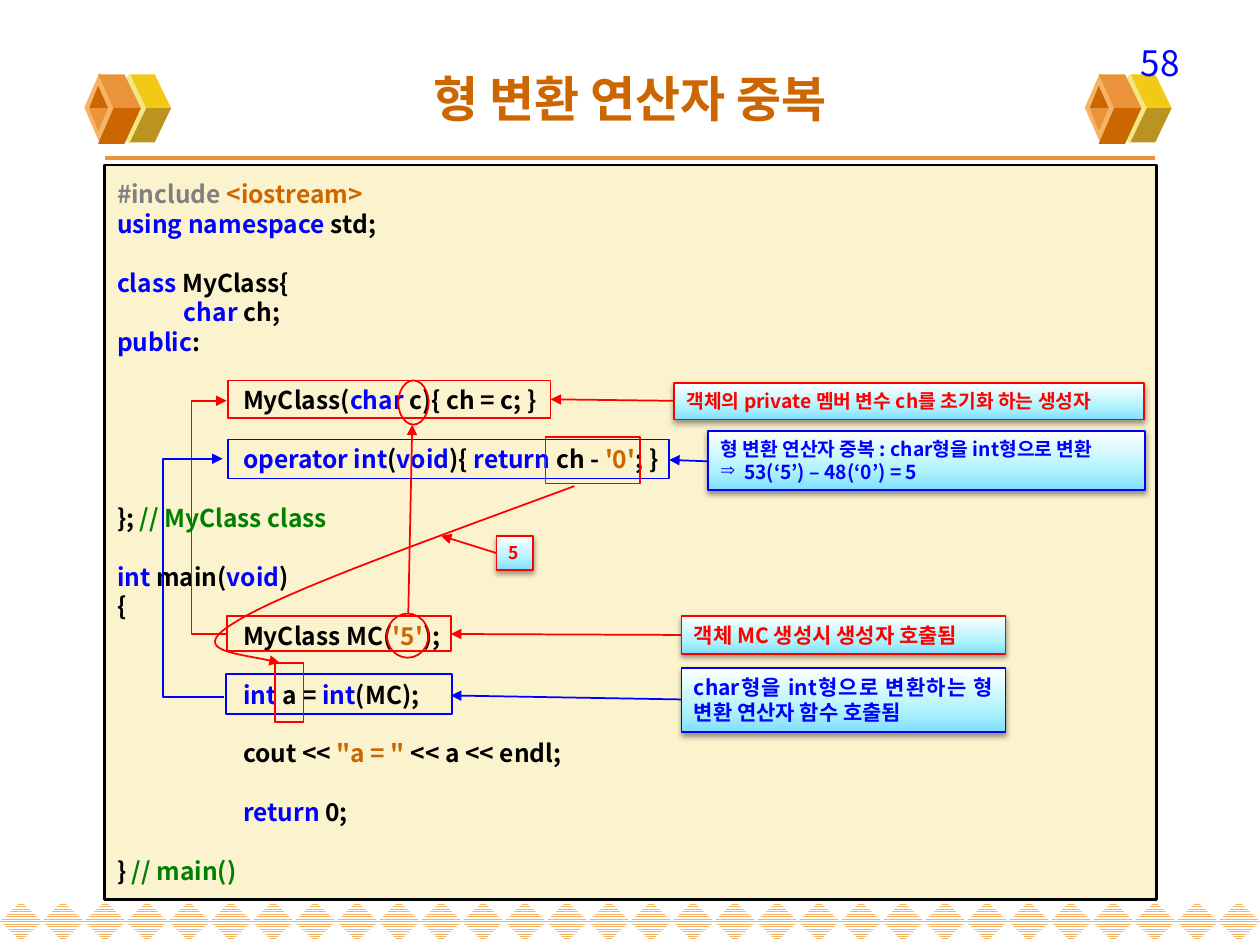
from lxml.etree import SubElement
from pptx import Presentation
from pptx.dml.color import RGBColor
from pptx.enum.dml import MSO_PATTERN
from pptx.enum.shapes import MSO_CONNECTOR, MSO_SHAPE
from pptx.enum.text import MSO_ANCHOR, PP_ALIGN
from pptx.oxml.ns import qn
from pptx.util import Cm, Pt

FONT = "Noto Sans CJK KR"
BLACK = RGBColor(0x00, 0x00, 0x00)
WHITE = RGBColor(0xFF, 0xFF, 0xFF)
GRAY = RGBColor(0x80, 0x80, 0x80)
RED = RGBColor(0xFF, 0x00, 0x00)
BLUE = RGBColor(0x00, 0x00, 0xFF)
GREEN = RGBColor(0x00, 0x80, 0x00)
BROWN = RGBColor(0xCC, 0x66, 0x00)
ORANGE = RGBColor(0xEB, 0x93, 0x3B)
LIGHT_ORANGE = RGBColor(0xF5, 0xB3, 0x63)
PALE_YELLOW = RGBColor(0xF1, 0xE7, 0x85)
YELLOW = RGBColor(0xF3, 0xC9, 0x17)
OLIVE = RGBColor(0xBB, 0x93, 0x21)
CREAM = RGBColor(0xFB, 0xF2, 0xCE)
CALLOUT_STOPS = [(0, "81DEFF"), (35000, "B2F3FC"), (100000, "FFFFFF")]


def style(shape, fill=None, line=None, width=1):
    shape.shadow.inherit = False
    if fill is None:
        shape.fill.background()
    else:
        shape.fill.solid()
        shape.fill.fore_color.rgb = fill
    if line is None:
        shape.line.fill.background()
    else:
        shape.line.color.rgb = line
        shape.line.width = Pt(width)


def add_runs(paragraph, runs, size, bold=True):
    for text, color in runs:
        run = paragraph.add_run()
        run.text = text
        run.font.size = Pt(size)
        run.font.bold = bold
        run.font.name = FONT
        run.font.color.rgb = color
        SubElement(run.font._element, qn("a:ea"), typeface=FONT)


presentation = Presentation()
presentation.slide_width = Cm(25.4)
presentation.slide_height = Cm(19.05)
slide = presentation.slides.add_slide(presentation.slide_layouts[5])
shapes = slide.shapes

diamond_count = 30
diamond_width = 25.4 / diamond_count
for index in range(diamond_count):
    diamond = shapes.add_shape(MSO_SHAPE.DIAMOND, Cm(index * diamond_width), Cm(18.17),
                               Cm(diamond_width), Cm(0.81))
    style(diamond)
    diamond.fill.patterned()
    diamond.fill.pattern = MSO_PATTERN.NARROW_HORIZONTAL
    diamond.fill.fore_color.rgb = LIGHT_ORANGE
    diamond.fill.back_color.rgb = WHITE

cube_diamonds = [(2.18, 1.5, 0.84, PALE_YELLOW), (1.7, 1.47, 0.61, LIGHT_ORANGE)]
cube_faces = [
    ([(2.95, 2.18), (3.45, 2.18), (3.12, 1.5), (2.62, 1.5)], YELLOW),
    ([(2.95, 2.18), (3.45, 2.18), (3.12, 2.87), (2.62, 2.87)], OLIVE),
    ([(2.29, 2.18), (2.84, 2.18), (2.51, 1.5), (1.98, 1.5)], ORANGE),
    ([(2.29, 2.18), (2.84, 2.18), (2.51, 2.9), (1.98, 2.9)], BROWN),
    ([(1.98, 1.73), (1.8, 2.18), (2.18, 2.18)], BROWN),
    ([(1.98, 2.64), (1.8, 2.18), (2.18, 2.18)], ORANGE),
]
for offset in (0, 20.17):
    for left, top, width, color in cube_diamonds:
        style(shapes.add_shape(MSO_SHAPE.DIAMOND, Cm(left + offset), Cm(top), Cm(width), Cm(1.4)), color)
    for corners, color in cube_faces:
        points = [(Cm(x + offset), Cm(y)) for x, y in corners]
        builder = shapes.build_freeform(*points[0])
        builder.add_line_segments(points[1:], close=True)
        style(builder.convert_to_shape(), color)

number_box = shapes.add_textbox(Cm(18.11), Cm(0.71), Cm(5.92), Cm(0.76))
number_box.text_frame.word_wrap = True
number_paragraph = number_box.text_frame.paragraphs[0]
number_paragraph.alignment = PP_ALIGN.RIGHT
add_runs(number_paragraph, [("58", BLUE)], 20, bold=False)

title = shapes.title
title.left, title.top, title.width, title.height = Cm(1.27), Cm(0.76), Cm(22.86), Cm(2.41)
title.text_frame.vertical_anchor = MSO_ANCHOR.MIDDLE
title_paragraph = title.text_frame.paragraphs[0]
title_paragraph.alignment = PP_ALIGN.CENTER
add_runs(title_paragraph, [("형 변환 연산자 중복", BROWN)], 28)

code_lines = [
    (0, 0, [("#include ", GRAY), ("<iostream>", BROWN)]),
    (0, 0, [("using namespace", BLUE), (" std;", BLACK)]),
    (1, 0, [("class ", BLUE), ("MyClass{", BLACK)]),
    (0, 1.35, [("char ", BLUE), ("ch;", BLACK)]),
    (0, 0, [("public", BLUE), (":", BLACK)]),
    (1, 2.54, [("MyClass(", BLACK), ("char", BLUE), (" c){ ch = c; }", BLACK)]),
    (1, 2.54, [("operator int", BLUE), ("(", BLACK), ("void", BLUE), ("){ ", BLACK),
               ("return ", BLUE), ("ch - ", BLACK), ("'0'", BROWN), ("; }", BLACK)]),
    (1, 0, [("}; ", BLACK), ("// MyClass class", GREEN)]),
    (1, 0, [("int", BLUE), (" main(", BLACK), ("void", BLUE), (")", BLACK)]),
    (0, 0, [("{", BLACK)]),
    (0, 2.54, [("MyClass MC(", BLACK), ("'5'", BROWN), (");", BLACK)]),
    (1, 2.54, [("int", BLUE), (" a = ", BLACK), ("int", BLUE), ("(MC);", BLACK)]),
    (1, 2.54, [("cout << ", BLACK), ('"a = "', BROWN), (" << a << endl;", BLACK)]),
    (1, 2.54, [("return", BLUE), (" 0;", BLACK)]),
    (1, 0, [("} ", BLACK), ("// main()", GREEN)]),
]
code_box = shapes.add_shape(MSO_SHAPE.RECTANGLE, Cm(2.11), Cm(3.33), Cm(21.21), Cm(14.81))
style(code_box, CREAM, BLACK, 1.5)
code_frame = code_box.text_frame
code_frame.word_wrap = True
code_frame.vertical_anchor = MSO_ANCHOR.MIDDLE
for index, (lines_before, indent, runs) in enumerate(code_lines):
    paragraph = code_frame.add_paragraph() if index else code_frame.paragraphs[0]
    paragraph.alignment = PP_ALIGN.LEFT
    paragraph.line_spacing = Pt(16.83)
    paragraph.space_before = Pt(16.83 * lines_before)
    paragraph._p.get_or_add_pPr().set("marL", str(Cm(indent)))
    add_runs(paragraph, runs, 14)

callouts = [
    (13.74, 12.42, 6.53, 0.76, RED, 12, ["객체 MC 생성시 생성자 호출됨"]),
    (13.74, 13.46, 6.53, 1.3, BLUE, 12, ["char형을 int형으로 변환하는 형 변환 연산자 함수 호출됨"]),
    (13.59, 7.72, 9.47, 0.74, RED, 11, ["객체의 private 멤버 변수 ch를 초기화 하는 생성자"]),
    (14.27, 8.69, 8.81, 1.19, BLUE, 11,
     ["형 변환 연산자 중복 : char형을 int형으로 변환", "53(‘5’) – 48(‘0’) = 5"]),
    (10.01, 10.8, 0.74, 0.69, RED, 10, ["5"]),
]
for left, top, width, height, color, size, texts in callouts:
    callout = shapes.add_shape(MSO_SHAPE.RECTANGLE, Cm(left), Cm(top), Cm(width), Cm(height))
    style(callout, WHITE, color)
    callout.fill.gradient()
    callout.fill.gradient_angle = 90
    stops = callout._element.spPr.find(".//" + qn("a:gsLst"))
    stops.clear()
    for position, stop_color in CALLOUT_STOPS:
        stop = SubElement(stops, qn("a:gs"), pos=str(position))
        SubElement(stop, qn("a:srgbClr"), val=stop_color)
    effects = callout._element.spPr.find(qn("a:effectLst"))
    shadow = SubElement(effects, qn("a:outerShdw"), blurRad="40000", dist="20000",
                        dir="5400000", rotWithShape="0")
    shadow_color = SubElement(shadow, qn("a:srgbClr"), val="000000")
    SubElement(shadow_color, qn("a:alpha"), val="38000")
    frame = callout.text_frame
    frame.word_wrap = True
    frame.vertical_anchor = MSO_ANCHOR.MIDDLE
    for index, text in enumerate(texts):
        paragraph = frame.add_paragraph() if index else frame.paragraphs[0]
        paragraph.alignment = PP_ALIGN.JUSTIFY
        paragraph.line_spacing = Pt(size * 1.2)
        if index:
            properties = paragraph._p.get_or_add_pPr()
            properties.set("marL", str(Cm(0.48)))
            properties.set("indent", str(Cm(-0.48)))
            SubElement(properties, qn("a:buChar"), char="⇒")
        add_runs(paragraph, [(text, color)], size)

frames = [
    (MSO_SHAPE.RECTANGLE, 4.6, 7.67, 6.5, 0.76, RED),
    (MSO_SHAPE.RECTANGLE, 4.6, 8.86, 8.89, 0.79, BLUE),
    (MSO_SHAPE.RECTANGLE, 4.57, 12.42, 4.52, 0.71, RED),
    (MSO_SHAPE.RECTANGLE, 4.55, 13.59, 4.57, 0.81, BLUE),
    (MSO_SHAPE.OVAL, 7.8, 12.37, 0.84, 0.89, RED),
    (MSO_SHAPE.OVAL, 8.03, 7.67, 0.61, 0.89, RED),
    (MSO_SHAPE.RECTANGLE, 11, 8.81, 1.91, 0.94, RED),
    (MSO_SHAPE.RECTANGLE, 5.54, 13.36, 0.58, 1.19, RED),
]
for kind, left, top, width, height, color in frames:
    style(shapes.add_shape(kind, Cm(left), Cm(top), Cm(width), Cm(height)), None, color)

connectors = [
    (2.12, 3.18, 23.28, 3.18, ORANGE, 2.25, False, None),
    (13.74, 12.8, 9.09, 12.78, RED, 1, True, None),
    (13.74, 14.1, 9.09, 14.02, BLUE, 1, True, None),
    (8.23, 12.37, 8.31, 8.56, RED, 1, True, None),
    (13.59, 8.08, 11.1, 8.05, RED, 1, True, None),
    (14.27, 9.3, 13.49, 9.27, BLUE, 1, True, None),
    (10.01, 11.15, 8.89, 10.8, RED, 1, True, None),
    (4.6, 12.78, 4.57, 8.08, RED, 1, True, 3.86),
    (4.52, 14.05, 4.49, 9.25, BLUE, 1, True, 3.28),
]
for x1, y1, x2, y2, color, width, arrow, bend_x in connectors:
    kind = MSO_CONNECTOR.ELBOW if bend_x else MSO_CONNECTOR.STRAIGHT
    connector = shapes.add_connector(kind, Cm(x1), Cm(y1), Cm(x2), Cm(y2))
    connector.line.color.rgb = color
    connector.line.width = Pt(width)
    if arrow:
        SubElement(connector.line._get_or_add_ln(), qn("a:tailEnd"), type="triangle")
    if bend_x:
        adjustments = connector._element.spPr.find(".//" + qn("a:avLst"))
        bend = round((x1 - bend_x) / (x1 - x2) * 100000)
        SubElement(adjustments, qn("a:gd"), name="adj1", fmla=f"val {bend}")
    SubElement(connector._element.spPr, qn("a:effectLst"))

curve_segments = [
    [(8.69, 10.87), (5.77, 11.91), (4.78, 12.52)],
    [(3.78, 13.11), (4.8, 13.16), (5.64, 13.36)],
]
curve_builder = shapes.build_freeform(Cm(11.58), Cm(9.8))
curve_builder.add_line_segments([(Cm(4.37), Cm(12.9)), (Cm(5.64), Cm(13.36))], close=False)
curve = curve_builder.convert_to_shape()
style(curve, None, RED)
SubElement(curve.line._get_or_add_ln(), qn("a:tailEnd"), type="triangle")
outline = curve._element.spPr.find(".//" + qn("a:path"))
for segment in outline.findall(qn("a:lnTo")):
    outline.remove(segment)
for controls in curve_segments:
    bezier = SubElement(outline, qn("a:cubicBezTo"))
    for x, y in controls:
        SubElement(bezier, qn("a:pt"), x=str(Cm(x) - curve.left), y=str(Cm(y) - curve.top))

presentation.save("out.pptx")
